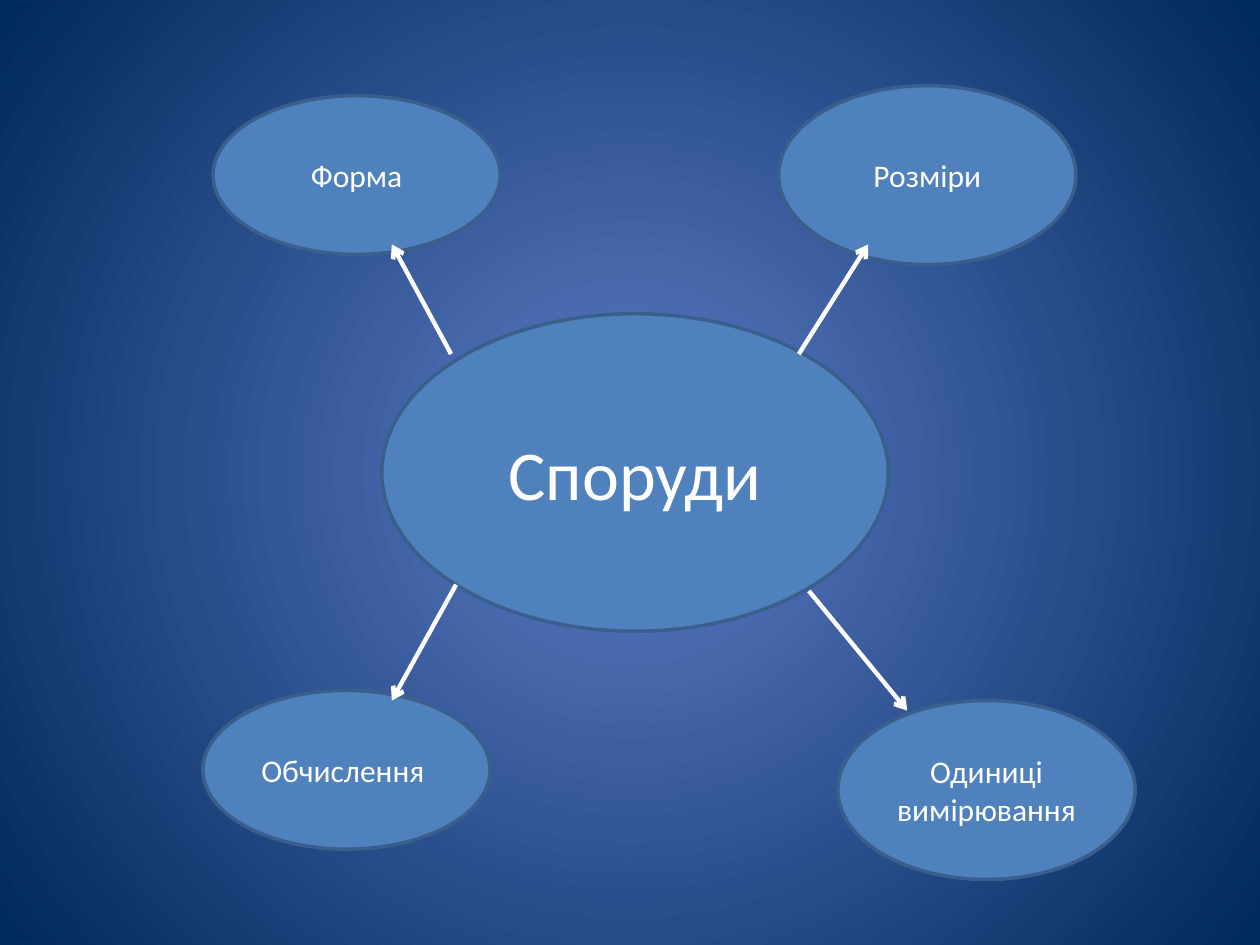
"""Build a mind map slide with a central topic and four linked aspects."""
from dataclasses import dataclass

from lxml import etree
from pptx import Presentation
from pptx.dml.color import RGBColor
from pptx.enum.shapes import MSO_CONNECTOR, MSO_SHAPE
from pptx.enum.text import MSO_ANCHOR, PP_ALIGN
from pptx.oxml.ns import qn
from pptx.slide import Slide
from pptx.util import Inches, Pt

OVAL = MSO_SHAPE.OVAL
STRAIGHT = MSO_CONNECTOR.STRAIGHT
MIDDLE = MSO_ANCHOR.MIDDLE
CENTER = PP_ALIGN.CENTER


@dataclass(frozen=True)
class Theme:
    font: str = "Calibri"
    topic_size: int = 40
    aspect_size: int = 18
    outline_width: float = 2
    arrow_width: float = 2.5
    glow: RGBColor = RGBColor(0x5E, 0x7C, 0xC5)
    edge: RGBColor = RGBColor(0x00, 0x29, 0x5C)
    bubble: RGBColor = RGBColor(0x4F, 0x81, 0xBD)
    outline: RGBColor = RGBColor(0x3A, 0x5F, 0x8C)
    light: RGBColor = RGBColor(0xFF, 0xFF, 0xFF)


@dataclass(frozen=True)
class Bubble:
    text: str
    left: float
    top: float
    width: float
    height: float
    size: int


@dataclass(frozen=True)
class Arrow:
    start: tuple[float, float]
    end: tuple[float, float]


THEME = Theme()
SMALL = (2.28, 1.26, THEME.aspect_size)
LARGE = (2.36, 1.42, THEME.aspect_size)
BUBBLES = (
    Bubble("Споруди", 3.03, 2.49, 4.02, 2.52, THEME.topic_size),
    Bubble("Форма", 1.69, 0.76, *SMALL),
    Bubble("Одиниці вимірювання", 6.65, 5.56, *LARGE),
    Bubble("Обчислення ", 1.61, 5.48, *SMALL),
    Bubble("Розміри", 6.18, 0.68, *LARGE),
)
ARROWS = (
    Arrow((6.42, 4.69), (7.2, 5.64)),
    Arrow((3.58, 2.81), (3.11, 1.94)),
    Arrow((3.62, 4.64), (3.11, 5.56)),
    Arrow((6.34, 2.81), (6.89, 1.94)),
)


def apply_format(target: object, values: dict[str, object]) -> None:
    """Set each named attribute on the target."""
    for name, value in values.items():
        setattr(target, name, value)


def paint_background(page: Slide) -> None:
    """Fill the page with a circular gradient around its centre."""
    fill = page.background.fill
    fill.gradient()
    for stop, color in zip(fill.gradient_stops, (THEME.glow, THEME.edge)):
        stop.color.rgb = color
    linear = next(page.element.iter(qn("a:lin")))
    circle = etree.Element(qn("a:path"), {"path": "circle"})
    center = dict.fromkeys("ltrb", "50000")
    etree.SubElement(circle, qn("a:fillToRect"), center)
    linear.getparent().replace(linear, circle)


def draw_bubble(page: Slide, bubble: Bubble) -> None:
    """Draw an ellipse with its centred label."""
    place = (bubble.left, bubble.top, bubble.width, bubble.height)
    box = page.shapes.add_shape(OVAL, *map(Inches, place))
    box.shadow.inherit = False
    box.fill.solid()
    box.fill.fore_color.rgb = THEME.bubble
    box.line.color.rgb = THEME.outline
    box.line.width = Pt(THEME.outline_width)
    apply_format(box.text_frame, {"word_wrap": True, "vertical_anchor": MIDDLE})
    para = box.text_frame.paragraphs[0]
    para.alignment = CENTER
    span = para.add_run()
    span.text = bubble.text
    apply_format(span.font, {"name": THEME.font, "size": Pt(bubble.size)})
    span.font.color.rgb = THEME.light


def draw_arrow(page: Slide, arrow: Arrow) -> None:
    """Draw a straight line with an open arrowhead at its end."""
    points = map(Inches, (*arrow.start, *arrow.end))
    connector = page.shapes.add_connector(STRAIGHT, *points)
    connector.line.color.rgb = THEME.light
    connector.line.width = Pt(THEME.arrow_width)
    properties = connector.element.spPr
    outline = properties.find(qn("a:ln"))
    etree.SubElement(outline, qn("a:tailEnd"), {"type": "arrow"})
    etree.SubElement(properties, qn("a:effectLst"))


def main() -> None:
    """Create and save the deck."""
    deck = Presentation()
    apply_format(deck, {"slide_width": Inches(10), "slide_height": Inches(7.5)})
    page = deck.slides.add_slide(deck.slide_layouts[6])
    paint_background(page)
    for bubble in BUBBLES:
        draw_bubble(page, bubble)
    for arrow in ARROWS:
        draw_arrow(page, arrow)
    deck.save("out.pptx")


if __name__ == "__main__":
    main()
